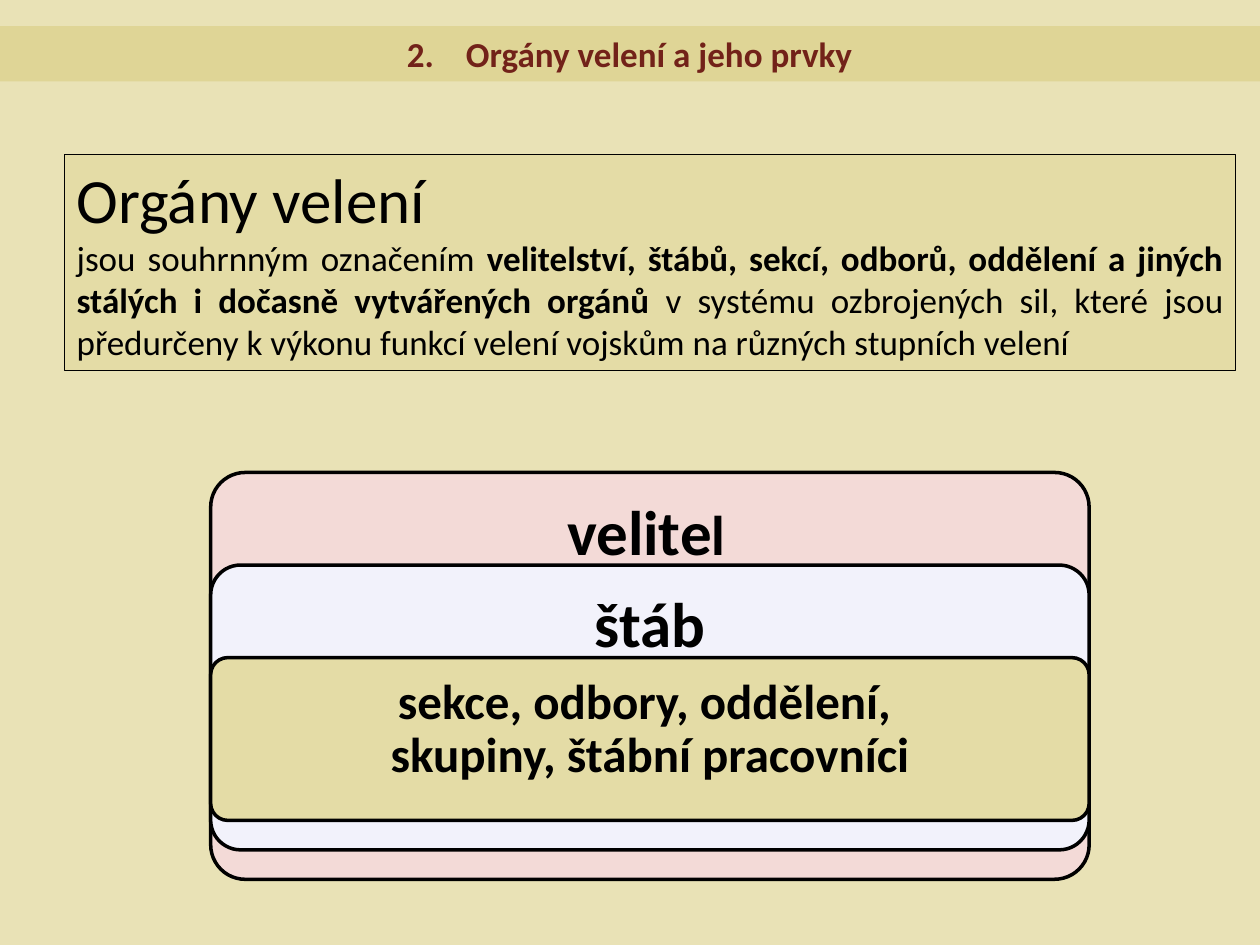
from pptx import Presentation
from pptx.dml.color import RGBColor
from pptx.enum.shapes import MSO_SHAPE
from pptx.enum.text import MSO_ANCHOR, PP_ALIGN
from pptx.util import Pt
from lxml.etree import SubElement
from pptx.oxml.ns import qn

SAND = RGBColor(0xE9, 0xE2, 0xB6)
BAND = RGBColor(0xDF, 0xD5, 0x96)
STRAW = RGBColor(0xE4, 0xDC, 0xA6)
PINK = RGBColor(0xF3, 0xDA, 0xD7)
PALE = RGBColor(0xF2, 0xF2, 0xFB)
WINE = RGBColor(0x72, 0x22, 0x19)
BLACK = RGBColor(0, 0, 0)


def write(text, para, size, bold=False, color=BLACK):
    for row, line in enumerate(text.split("\n")):
        if row:
            para.add_line_break()
        run = para.add_run()
        run.text = line
        font = run.font
        font.name, font.size, font.bold = "Calibri", Pt(size), bold
        font.color.rgb = color


def panel(kind, left, top, width, height, fill, line=0):
    shape = slide.shapes.add_shape(kind, Pt(left), Pt(top), Pt(width), Pt(height))
    shape.shadow.inherit = False
    shape.fill.solid()
    shape.fill.fore_color.rgb = fill
    if line:
        shape.line.color.rgb = BLACK
        shape.line.width = Pt(line)
    else:
        shape.line.fill.background()
    shape.text_frame.vertical_anchor = MSO_ANCHOR.TOP
    return shape


deck = Presentation()
deck.slide_width, deck.slide_height = Pt(720), Pt(540)
slide = deck.slides.add_slide(deck.slide_layouts[6])
slide.background.fill.solid()
slide.background.fill.fore_color.rgb = SAND

title = panel(MSO_SHAPE.RECTANGLE, 0, 15, 720, 31.5, BAND)
title.text_frame.margin_left = Pt(232.5)
para = title.text_frame.paragraphs[0]
para.alignment = PP_ALIGN.LEFT
tabs = SubElement(para._p.get_or_add_pPr(), qn("a:tabLst"))
SubElement(tabs, qn("a:tab"), pos=str(Pt(33.75)), algn="l")
write("2.\tOrgány velení a jeho prvky", para, size=20, bold=True, color=WINE)

note = panel(MSO_SHAPE.RECTANGLE, 36.75, 88.25, 669.5, 123.5, STRAW, line=0.75)
frame = note.text_frame
head, body = frame.paragraphs[0], frame.add_paragraph()
head.alignment = body.alignment = PP_ALIGN.JUSTIFY
write("Orgány velení", head, size=36)
write("jsou souhrnným označením ", body, size=20)
write("velitelství, štábů, sekcí, odborů, oddělení a jiných stálých i "
      "dočasně vytvářených orgánů", body, size=20, bold=True)
write(" v systému ozbrojených sil, které jsou předurčeny k výkonu funkcí "
      "velení vojskům na různých stupních velení", body, size=20)

tiers = [
    (232.5, 0.085, PINK, 5.75, 10.8, -2, [("velite", 36), ("l", 32)]),
    (162.75, 0.105, PALE, 5, 10.8, 0, [("štáb", 36)]),
    (93, 0.105, STRAW, 2.85, 8.6, 0,
     [("sekce, odbory, oddělení, \nskupiny, štábní pracovníci", 28)]),
]
for row, (high, curve, fill, gap, inset, shift, runs) in enumerate(tiers):
    top = 270 + 52.9 * row
    card = panel(MSO_SHAPE.ROUNDED_RECTANGLE, 120.4, top, 502, high, fill, line=2)
    card.adjustments[0] = curve
    label = slide.shapes.add_textbox(
        Pt(120.4 + gap + shift), Pt(top + gap), Pt(502 - 2 * gap), Pt(high - 2 * gap))
    frame = label.text_frame
    frame.word_wrap = True
    frame.margin_left = frame.margin_right = frame.margin_top = Pt(inset)
    para = frame.paragraphs[0]
    para.alignment = PP_ALIGN.CENTER
    para.line_spacing = 0.9
    for text, size in runs:
        write(text, para, size=size, bold=True)

deck.save("out.pptx")
